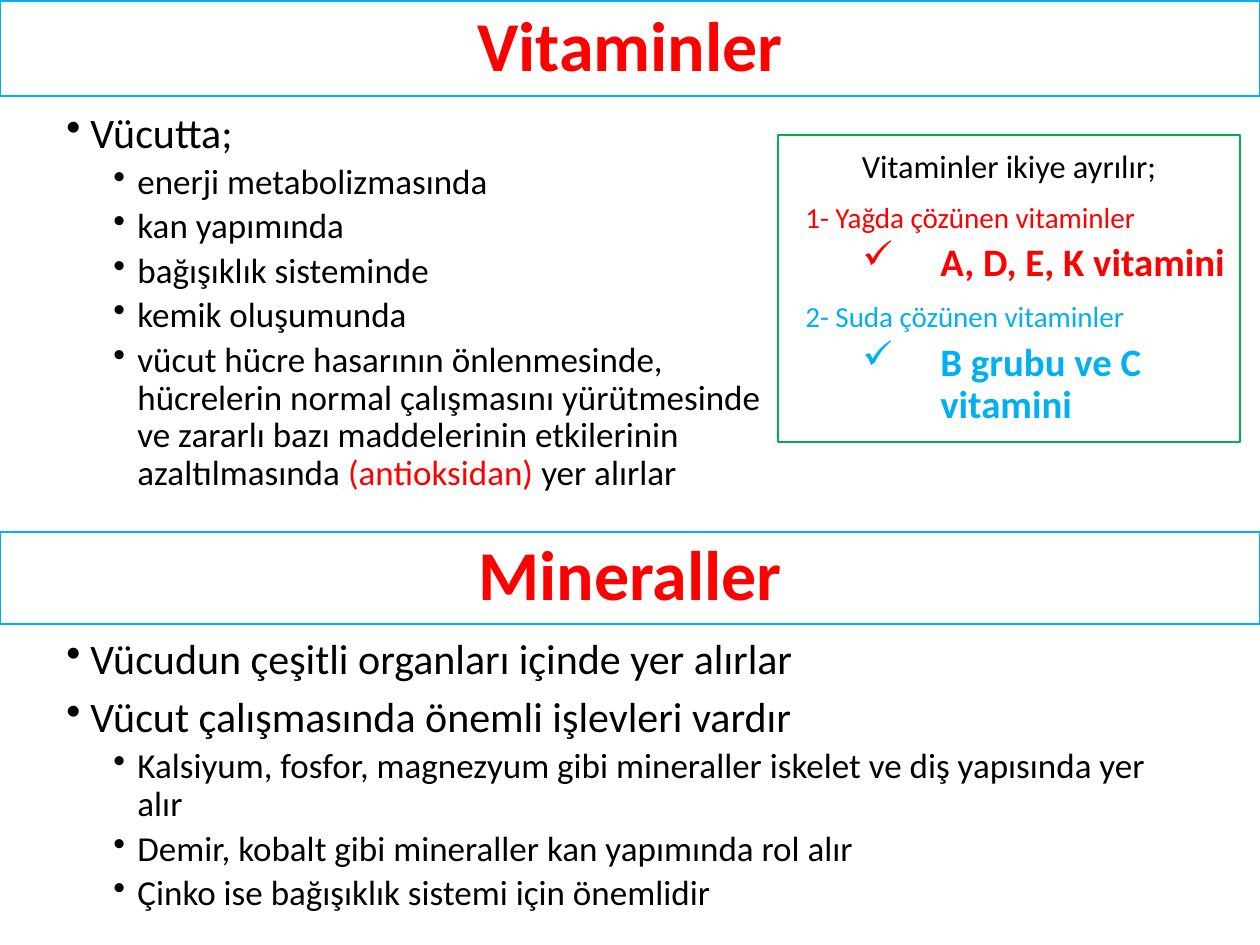
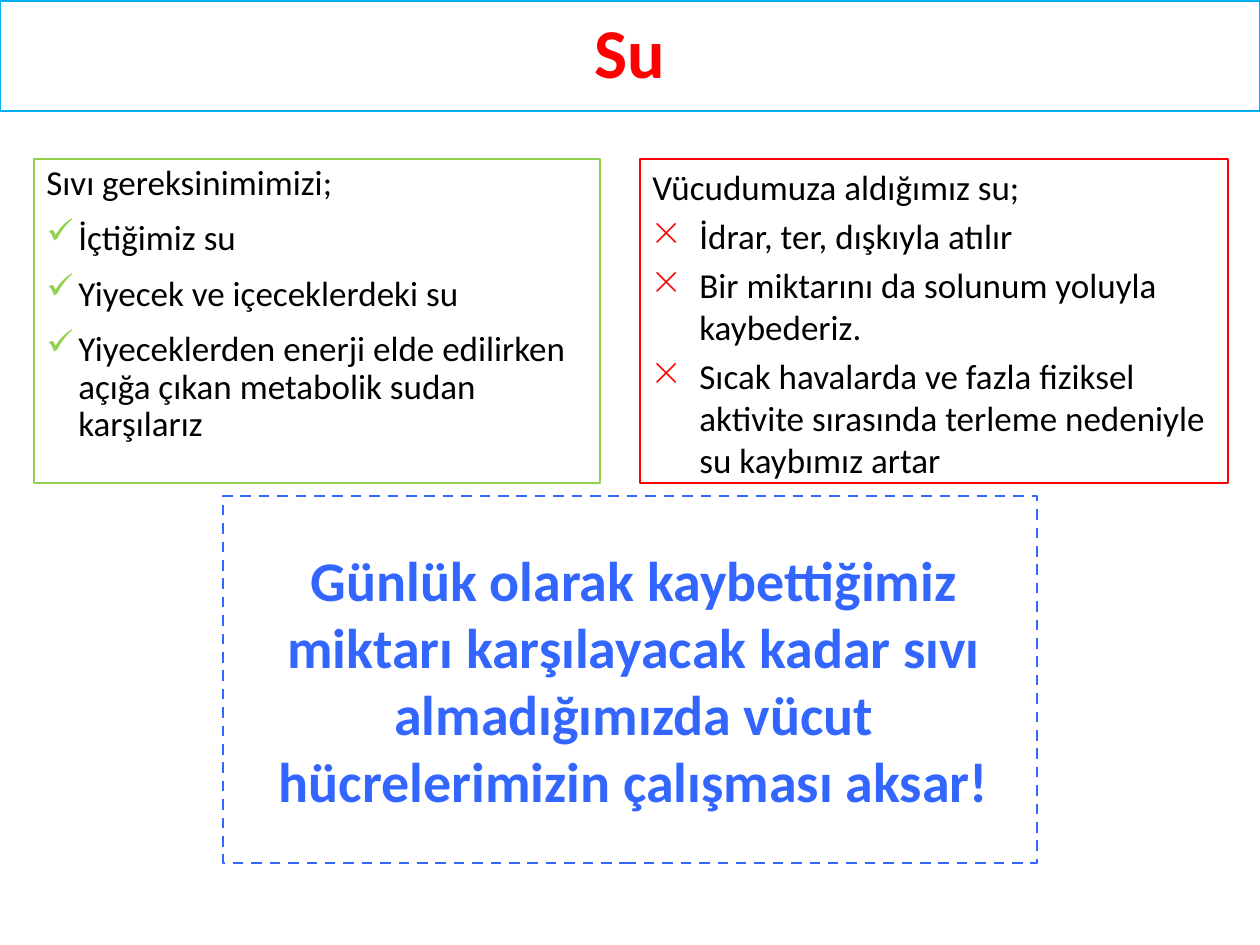
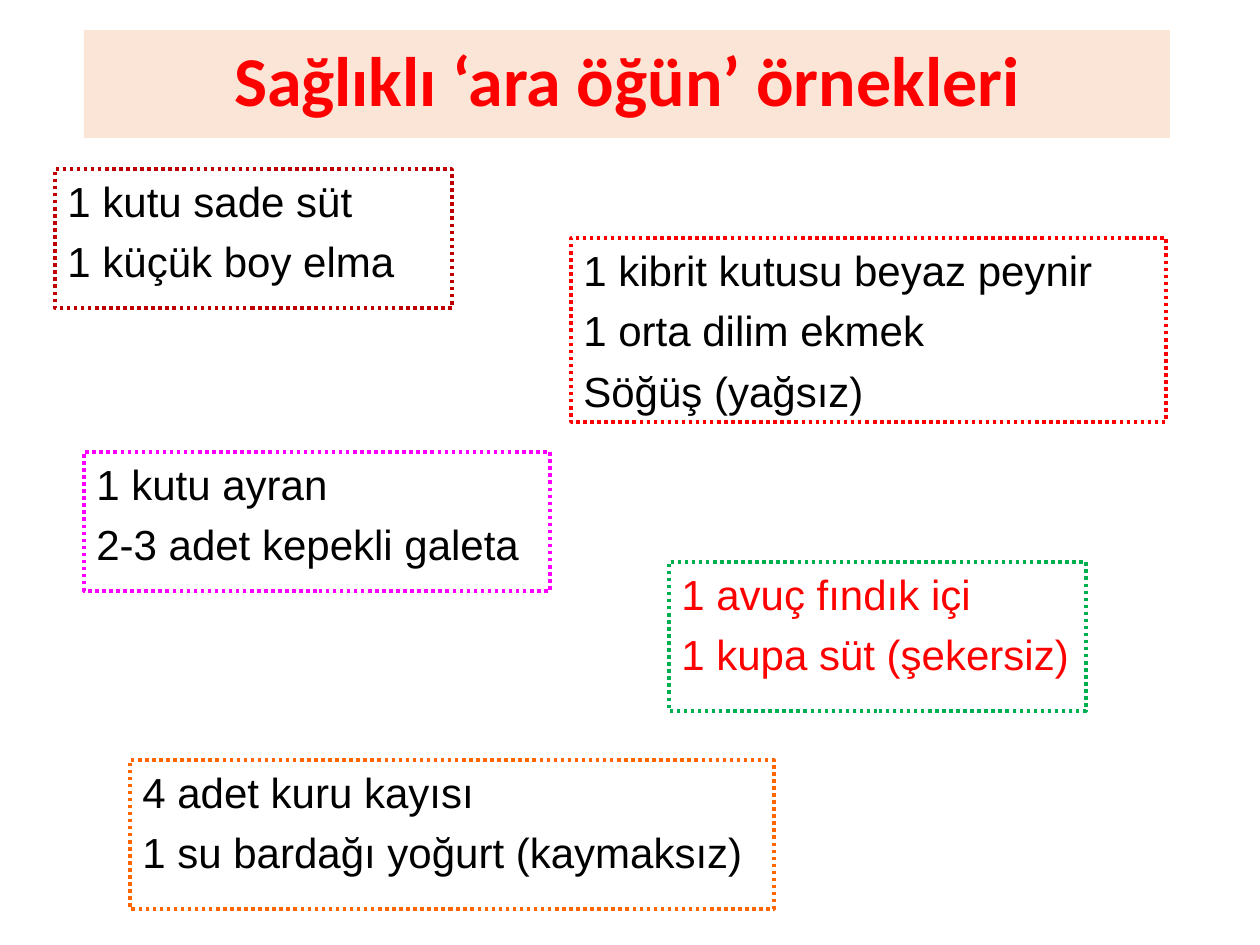
import dataclasses

import pptx
import pptx.dml.color
import pptx.enum.dml
import pptx.enum.shapes
import pptx.enum.text
import pptx.oxml.ns
import pptx.util
from lxml import etree

PX = 914400 / 126
BLACK, RED, SKY, GREEN, LIME = "000000", "FF0000", "00B0F0", "00B050", "92D050"
BLUE, MAGENTA, ORANGE, MAROON, PEACH = "3366FF", "FF00FF", "FF6600", "C00000", "FBE5D6"

ALIGN = pptx.enum.text.PP_ALIGN
ANCHOR = pptx.enum.text.MSO_ANCHOR
DASH = pptx.enum.dml.MSO_LINE


def px(length):
    return pptx.util.Emu(round(length * PX))


def rgb(value):
    return pptx.dml.color.RGBColor.from_string(value)


@dataclasses.dataclass(frozen=True)
class ParagraphStyle:
    size: float
    before: float = 0
    left: int = 0
    hang: int = 0
    spacing: float = 0.9
    level: int = 0
    color: str = BLACK
    bold: bool = False
    align: ALIGN = ALIGN.LEFT
    bullet: str = ""
    bullet_color: str = ""
    font: str = "Calibri"


# Shared paragraph styles
TITLE = ParagraphStyle(40, color=RED, bold=True, align=ALIGN.CENTER)
TOPIC = ParagraphStyle(24, 7.5, 24, 24, bullet="•")
DETAIL = ParagraphStyle(20, 3.8, 71, 24, level=1, bullet="•")
GROUPS_HEAD = ParagraphStyle(18.5, align=ALIGN.CENTER)
FAT_GROUP = ParagraphStyle(16.6, 10, 15, color=RED)
FAT_MEMBERS = ParagraphStyle(22.2, 5, 150, 78, level=1, color=RED, bold=True, bullet="✓")
WATER_GROUP = dataclasses.replace(FAT_GROUP, color=SKY)
WATER_MEMBERS = dataclasses.replace(FAT_MEMBERS, color=SKY)
INTAKE_HEAD = ParagraphStyle(20)
INTAKE = ParagraphStyle(20, 10, 32, 32, bullet="✓", bullet_color=LIME)
LOSS_HEAD = ParagraphStyle(20, spacing=1)
LOSS = ParagraphStyle(20, 4, 47, 47, spacing=1, bullet="×", bullet_color=RED)
WARNING = ParagraphStyle(32, left=8, spacing=1, color=BLUE, bold=True, align=ALIGN.CENTER)
SNACK = ParagraphStyle(24, 5.8, 47, 47, spacing=1, font="Arial")


class Deck:
    def __init__(self):
        self.show = pptx.Presentation()
        self.show.slide_width, self.show.slide_height = px(1260), px(945)
        self.slide = None

    def new_slide(self):
        self.slide = self.show.slides.add_slide(self.show.slide_layouts[6])

    def title(self, text, place, line=SKY, fill=None):
        self.box(place, [(TITLE, text)], line, fill=fill, anchor=ANCHOR.MIDDLE)

    def box(self, place, paragraphs, line=None, width=0.75, dash=None, fill=None,
            anchor=ANCHOR.TOP):
        rectangle = self.slide.shapes.add_shape(
            pptx.enum.shapes.MSO_SHAPE.RECTANGLE, *map(px, place))
        rectangle.shadow.inherit = False
        if fill:
            rectangle.fill.solid()
            rectangle.fill.fore_color.rgb = rgb(fill)
        else:
            rectangle.fill.background()
        if line:
            rectangle.line.color.rgb = rgb(line)
            rectangle.line.width = pptx.util.Pt(width)
            if dash:
                rectangle.line.dash_style = dash
        else:
            rectangle.line.fill.background()
        self.set_paragraphs(rectangle.text_frame, paragraphs, anchor)

    def text(self, place, paragraphs):
        frame = self.slide.shapes.add_textbox(*map(px, place)).text_frame
        self.set_paragraphs(frame, paragraphs, ANCHOR.TOP)

    def set_paragraphs(self, frame, paragraphs, anchor):
        """Each entry is a style and its parts: plain text or (text, colour)."""
        frame.word_wrap = True
        frame.vertical_anchor = anchor
        for index, (style, *parts) in enumerate(paragraphs):
            paragraph = frame.add_paragraph() if index else frame.paragraphs[0]
            self.layout(paragraph, style, first=index == 0)
            for part in parts:
                wording, color = (part, style.color) if isinstance(part, str) else part
                run = paragraph.add_run()
                run.text = wording
                run.font.name = style.font
                run.font.size = pptx.util.Pt(style.size)
                run.font.bold = style.bold
                run.font.color.rgb = rgb(color)

    def layout(self, paragraph, style, first):
        paragraph.alignment = style.align
        paragraph.level = style.level
        paragraph.line_spacing = style.spacing
        paragraph.space_before = pptx.util.Pt(0 if first else style.before)
        properties = paragraph._p.get_or_add_pPr()
        properties.set("marL", str(px(style.left)))
        properties.set("indent", str(-px(style.hang)))
        if style.bullet_color:
            color = self.add_xml(properties, "buClr")
            self.add_xml(color, "srgbClr", val=style.bullet_color)
        if style.bullet:
            self.add_xml(properties, "buChar", char=style.bullet)

    @staticmethod
    def add_xml(parent, tag, **attributes):
        return etree.SubElement(parent, pptx.oxml.ns.qn("a:" + tag), attributes)


def vitamins_and_minerals(deck):
    deck.new_slide()
    # Vitamins
    deck.title("Vitaminler", (0, 1, 1260, 95))
    deck.box((778, 135, 462, 307), [
        (GROUPS_HEAD, "Vitaminler ikiye ayrılır;"),
        (FAT_GROUP, "1- Yağda çözünen vitaminler"),
        (FAT_MEMBERS, "A, D, E, K vitamini"),
        (WATER_GROUP, "2- Suda çözünen vitaminler"),
        (WATER_MEMBERS, "B grubu ve C vitamini"),
    ], GREEN, anchor=ANCHOR.MIDDLE)
    deck.text((54, 106, 725, 525), [
        (TOPIC, "Vücutta;"),
        (DETAIL, "enerji metabolizmasında"),
        (DETAIL, "kan yapımında"),
        (DETAIL, "bağışıklık sisteminde"),
        (DETAIL, "kemik oluşumunda"),
        (DETAIL, "vücut hücre hasarının önlenmesinde, hücrelerin normal çalışmasını "
                 "yürütmesinde ve zararlı bazı maddelerinin etkilerinin azaltılmasında ",
         ("(antioksidan) ", RED), "yer alırlar"),
    ])
    # Minerals
    deck.title("Mineraller", (0, 532, 1260, 92))
    deck.text((54, 632, 1153, 306), [
        (TOPIC, "Vücudun çeşitli organları içinde yer alırlar"),
        (TOPIC, "Vücut çalışmasında önemli işlevleri vardır"),
        (DETAIL, "Kalsiyum, fosfor, magnezyum gibi mineraller iskelet ve diş yapısında yer alır"),
        (DETAIL, "Demir, kobalt gibi mineraller kan yapımında rol alır"),
        (DETAIL, "Çinko ise bağışıklık sistemi için önemlidir"),
    ])


def water(deck):
    deck.new_slide()
    deck.title("Su", (0, 1, 1260, 110))
    # Intake and loss
    deck.box((34, 159, 566, 324), [
        (INTAKE_HEAD, "Sıvı gereksinimimizi;"),
        (INTAKE, "İçtiğimiz su"),
        (INTAKE, "Yiyecek ve içeceklerdeki su"),
        (INTAKE, "Yiyeceklerden enerji elde edilirken açığa çıkan metabolik sudan karşılarız"),
    ], LIME)
    deck.box((640, 159, 588, 324), [
        (LOSS_HEAD, "Vücudumuza aldığımız su;"),
        (LOSS, "İdrar, ter, dışkıyla atılır"),
        (LOSS, "Bir miktarını da solunum yoluyla kaybederiz."),
        (LOSS, "Sıcak havalarda ve fazla fiziksel aktivite sırasında terleme nedeniyle "
               "su kaybımız artar"),
    ], RED)
    # Warning
    deck.box((223, 496, 814, 367), [
        (WARNING, "Günlük olarak kaybettiğimiz miktarı karşılayacak kadar sıvı "
                  "almadığımızda vücut hücrelerimizin çalışması aksar!"),
    ], BLUE, 1.5, DASH.DASH, anchor=ANCHOR.MIDDLE)


def snacks(deck):
    deck.new_slide()
    deck.title("Sağlıklı ‘ara öğün’ örnekleri", (84, 30, 1086, 108), line=None, fill=PEACH)
    # Snack examples: place, outline, text colour, foods
    examples = [
        ((571, 238, 595, 184), RED, BLACK,
         ["1 kibrit kutusu beyaz peynir", "1 orta dilim ekmek", "Söğüş (yağsız)"]),
        ((84, 452, 466, 139), MAGENTA, BLACK, ["1 kutu ayran", "2-3 adet kepekli galeta"]),
        ((669, 562, 417, 149), GREEN, RED, ["1 avuç fındık içi", "1 kupa süt (şekersiz)"]),
        ((130, 760, 644, 149), ORANGE, BLACK,
         ["4 adet kuru kayısı", "1 su bardağı yoğurt (kaymaksız)"]),
        ((55, 169, 397, 139), MAROON, BLACK, ["1 kutu sade süt", "1 küçük boy elma"]),
    ]
    for place, outline, color, foods in examples:
        style = dataclasses.replace(SNACK, color=color)
        deck.box(place, [(style, food) for food in foods], outline, 2, DASH.ROUND_DOT)


def main():
    deck = Deck()
    vitamins_and_minerals(deck)
    water(deck)
    snacks(deck)
    deck.show.save("out.pptx")


if __name__ == "__main__":
    main()
